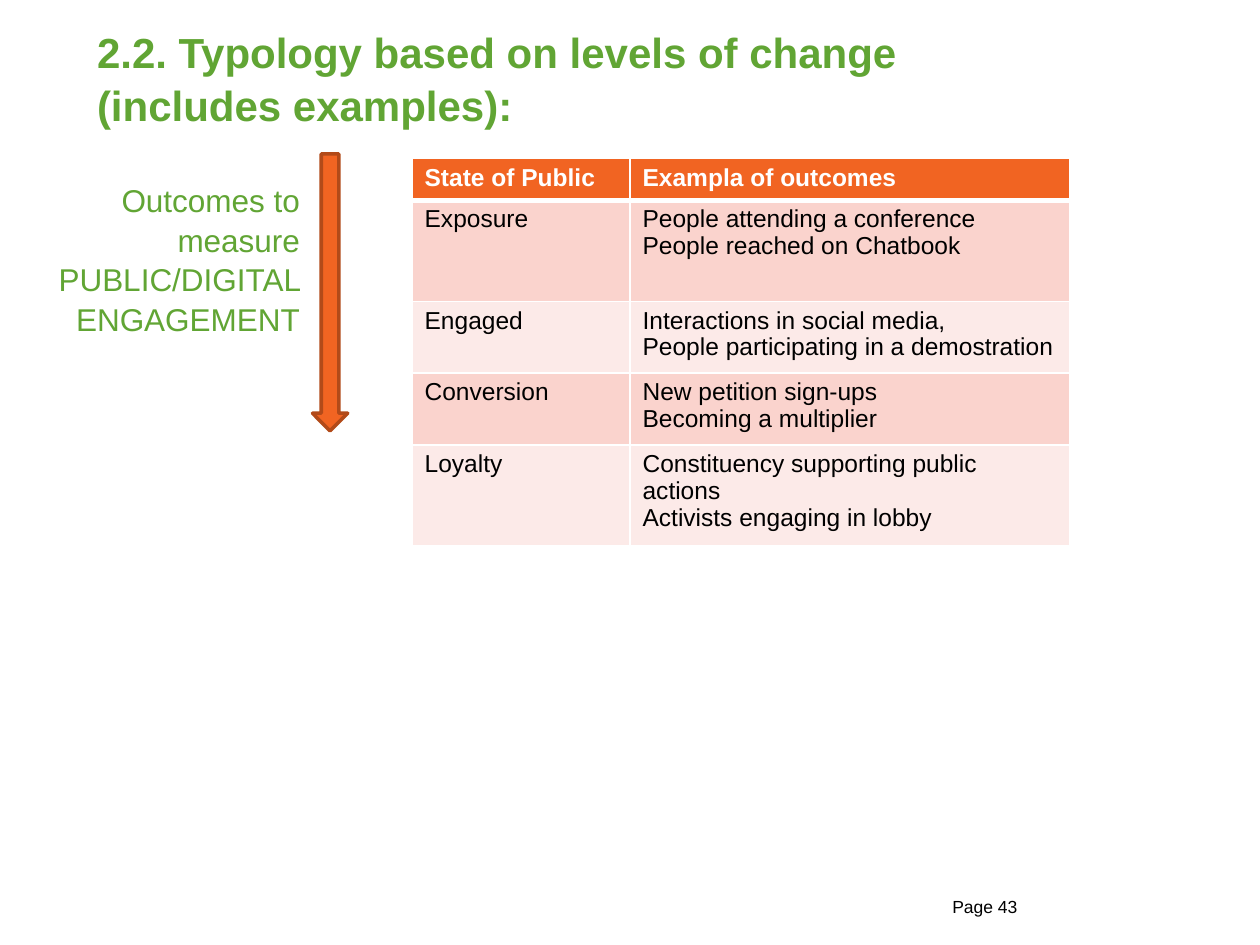
from typing import Any, NamedTuple

from lxml.etree import SubElement as Sub
from pptx import Presentation
from pptx.dml.color import RGBColor as Rgb
from pptx.enum.shapes import MSO_SHAPE as Kind
from pptx.enum.text import MSO_ANCHOR as Anchor, PP_ALIGN as Align
from pptx.oxml.ns import qn
from pptx.util import Inches, Pt

WIDE, HIGH = Inches(10), Inches(7.5)
GREEN, ORANGE, RUST = "61A534", "F16422", "B24A19"
WHITE, BLACK = "FFFFFF", "000000"
BANDS = ("FAD3CD", "FCEAE8")


class Box(NamedTuple):
    left: float
    top: float
    width: float
    height: float

    def place(self) -> tuple[int, ...]:
        full = (WIDE, HIGH, WIDE, HIGH)
        return tuple(round(share * size) for share, size in zip(self, full))


class Style(NamedTuple):
    size: float
    color: str
    bold: bool = False
    align: Any = Align.LEFT
    space: float = 1.0


class Row(NamedTuple):
    state: str
    result: str
    height: float


TITLE = Style(24, GREEN, True, space=1.05)
LABEL = Style(18, GREEN, align=Align.RIGHT, space=1.05)
PAGE = Style(10, BLACK)
HEAD = Style(14, WHITE, True, space=0.97)
BODY = Style(14, BLACK, space=0.97)

COLS = (0.173, 0.349)
ROWS = (
    Row("State of Public", "Exampla of outcomes", 0.044),
    Row("Exposure", "People attending a conference\nPeople reached on Chatbook", 0.107),
    Row("Engaged", "Interactions in social media,\nPeople participating in a demostration", 0.076),
    Row("Conversion", "New petition sign-ups\nBecoming a multiplier", 0.076),
    Row("Loyalty", "Constituency supporting public actions\nActivists engaging in lobby", 0.107),
)


def tint(code: str) -> Rgb:
    return Rgb.from_string(code)


def apply(item: Any, values: dict[str, Any]) -> None:
    for name, value in values.items():
        setattr(item, name, value)


def write(frame: Any, text: str, style: Style) -> None:
    frame.text = text
    for para in frame.paragraphs:
        apply(para, {"alignment": style.align, "line_spacing": style.space})
        for run in para.runs:
            apply(run.font, {"name": "Arial", "size": Pt(style.size), "bold": style.bold})
            run.font.color.rgb = tint(style.color)


def fill(item: Any, code: str) -> None:
    item.fill.solid()
    item.fill.fore_color.rgb = tint(code)


def edge(cell: Any, sides: dict[str, float]) -> None:
    props = cell._tc.get_or_add_tcPr()
    for spot, (side, width) in enumerate(sides.items()):
        line = Sub(props, qn(f"a:ln{side}"), w=str(Pt(width)))
        Sub(Sub(line, qn("a:solidFill")), qn("a:srgbClr"), val=WHITE)
        props.insert(spot, line)


def label(slide: Any, box: Box, text: str, style: Style, pad: float = 0.05) -> None:
    frame = slide.shapes.add_textbox(*box.place()).text_frame
    apply(frame, {"word_wrap": True, "margin_top": Inches(pad), "margin_bottom": Inches(pad)})
    write(frame, text, style)


def title(slide: Any, box: Box, text: str) -> None:
    shape = slide.shapes.title
    apply(shape, dict(zip(("left", "top", "width", "height"), box.place())))
    apply(shape.text_frame, {"word_wrap": True, "vertical_anchor": Anchor.MIDDLE})
    write(shape.text_frame, text, TITLE)


def arrow(slide: Any, box: Box) -> None:
    shape = slide.shapes.add_shape(Kind.DOWN_ARROW, *box.place())
    shape.shadow.inherit = False
    fill(shape, ORANGE)
    shape.line.color.rgb = tint(RUST)
    shape.line.width = Pt(2)


def grid(slide: Any, left: float, top: float) -> None:
    box = Box(left, top, sum(COLS), sum(row.height for row in ROWS))
    table = slide.shapes.add_table(len(ROWS), len(COLS), *box.place()).table
    for col, share in zip(table.columns, COLS):
        col.width = round(share * WIDE)
    for at, row in enumerate(ROWS):
        table.rows[at].height = round(row.height * HIGH)
        for cell, text in zip(table.rows[at].cells, (row.state, row.result)):
            write(cell.text_frame, text, BODY if at else HEAD)
            fill(cell, BANDS[(at - 1) % 2] if at else ORANGE)
            edge(cell, {"L": 1, "R": 1, "T": 3 if at == 1 else 1, "B": 1 if at else 3})


def main() -> None:
    deck = Presentation()
    apply(deck, {"slide_width": WIDE, "slide_height": HIGH})
    slide = deck.slides.add_slide(deck.slide_layouts[5])
    title(slide, Box(0.067, 0.039, 0.675, 0.085),
          "2.2. Typology based on levels of change (includes examples):")
    arrow(slide, Box(0.248, 0.163, 0.028, 0.293))
    label(slide, Box(0.028, 0.183, 0.22, 0.175),
          "Outcomes to measure PUBLIC/DIGITAL ENGAGEMENT", LABEL)
    grid(slide, 0.327, 0.168)
    label(slide, Box(0.746, 0.948, 0.134, 0.024), "Page 43", PAGE, 0)
    deck.save("out.pptx")


if __name__ == "__main__":
    main()
